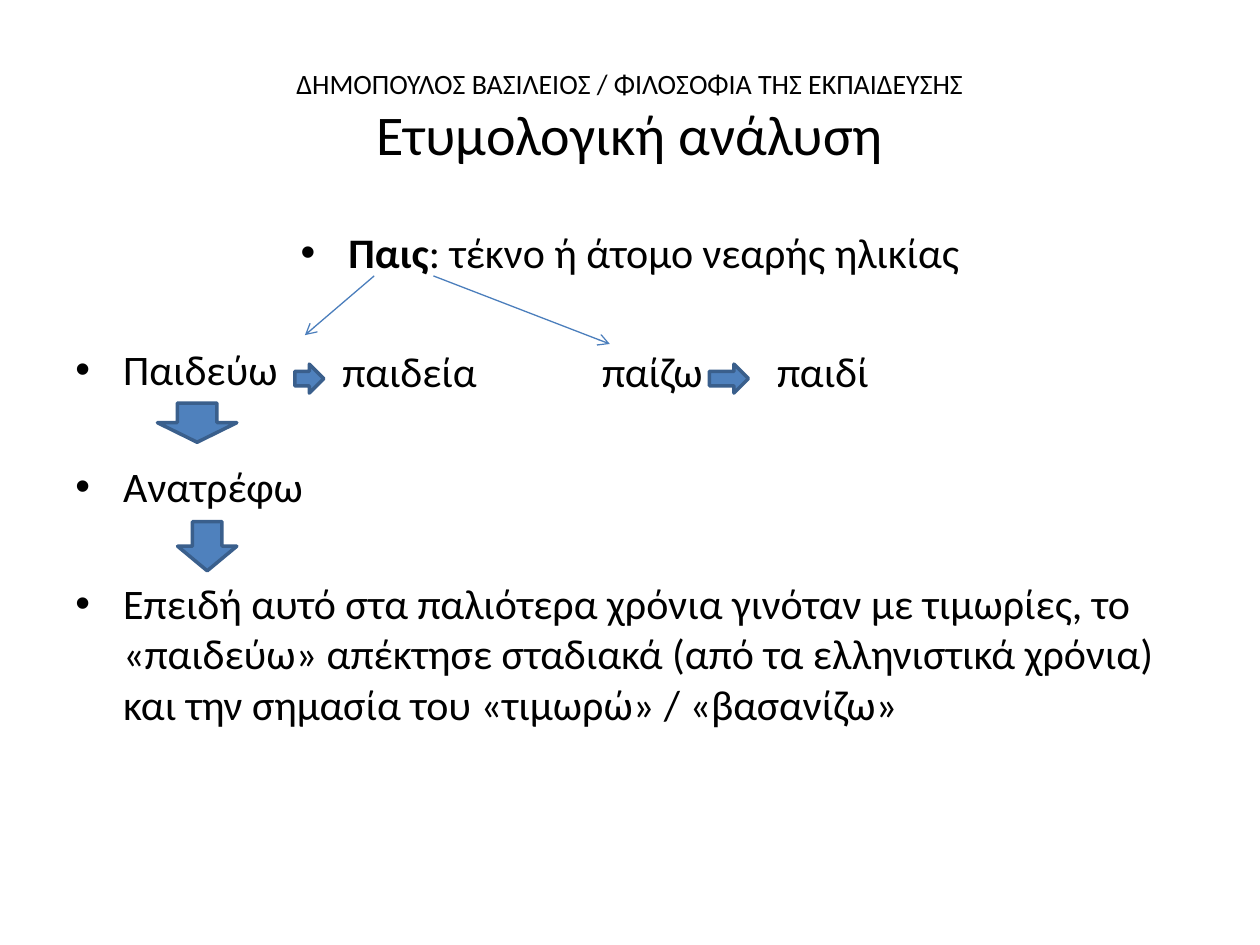
"""Builds the slide on the etymology of the Greek word for child."""
from lxml.etree import SubElement
from pptx import Presentation
from pptx.dml.color import RGBColor
from pptx.enum.shapes import MSO_CONNECTOR, MSO_SHAPE
from pptx.enum.text import MSO_ANCHOR, PP_ALIGN
from pptx.oxml.ns import qn
from pptx.util import Inches, Pt

HEADING = [("ΔΗΜΟΠΟΥΛΟΣ ΒΑΣΙΛΕΙΟΣ / ΦΙΛΟΣΟΦΙΑ ΤΗΣ ΕΚΠΑΙΔΕΥΣΗΣ", 16),
           ("Ετυμολογική ανάλυση", 32)]
ROOT, MEANING = "Παις", ": τέκνο ή άτομο νεαρής ηλικίας"
STEPS = ["Παιδεύω", "Ανατρέφω",
         "Επειδή αυτό στα παλιότερα χρόνια γινόταν με τιμωρίες, το «παιδεύω» "
         "απέκτησε σταδιακά (από τα ελληνιστικά χρόνια) και την σημασία του "
         "«τιμωρώ» / «βασανίζω»"]
DERIVED = [("παιδεία", 2.72), ("παίζω", 4.78), ("παιδί", 6.17)]
BRANCHES = [((2.97, 2.19), (2.42, 2.66)), ((3.44, 2.19), (4.84, 2.73))]
RIGHT, DOWN = MSO_SHAPE.RIGHT_ARROW, MSO_SHAPE.DOWN_ARROW
BLOCK_ARROWS = [(RIGHT, 2.34, 2.89, 0.23, 0.23), (RIGHT, 5.63, 2.89, 0.31, 0.23),
                (DOWN, 1.25, 3.2, 0.63, 0.31), (DOWN, 1.41, 4.14, 0.47, 0.39)]
BODY_SIZE, STEP_GAP, HANG = 24, 38, Inches(0.38)
DERIVED_TOP, MARGIN = 2.69, 0.1


def color(value):
    return RGBColor.from_string(value)


def add_text_frame(slide, left, top, width, height):
    frame = slide.shapes.add_textbox(
        Inches(left), Inches(top), Inches(width), Inches(height)).text_frame
    frame.word_wrap = True
    return frame


def style(paragraph, size, align=PP_ALIGN.LEFT):
    paragraph.alignment = align
    paragraph.font.name = "Calibri"
    paragraph.font.size = Pt(size)
    paragraph.font.color.rgb = color("000000")


def add_bullet(paragraph):
    properties = paragraph._p.get_or_add_pPr()
    properties.set("marL", str(HANG))
    properties.set("indent", str(-HANG))
    bullet_font = properties.makeelement(qn("a:buFont"), {"typeface": "Arial"})
    bullet = properties.makeelement(qn("a:buChar"), {"char": "•"})
    defaults = properties.find(qn("a:defRPr"))
    defaults.addprevious(bullet_font)
    defaults.addprevious(bullet)


def add_heading(slide):
    frame = add_text_frame(slide, 0.5, 0.3, 9, 1.25)
    frame.vertical_anchor = MSO_ANCHOR.MIDDLE
    for index, (words, size) in enumerate(HEADING):
        paragraph = frame.add_paragraph() if index else frame.paragraphs[0]
        paragraph.text = words
        style(paragraph, size, PP_ALIGN.CENTER)


def add_body(slide):
    frame = add_text_frame(slide, 0.5, 1.75, 9, 4.95)
    definition = frame.paragraphs[0]
    root = definition.add_run()
    root.text = ROOT
    root.font.bold = True
    definition.add_run().text = MEANING
    style(definition, BODY_SIZE, PP_ALIGN.CENTER)
    add_bullet(definition)
    for step in STEPS:
        paragraph = frame.add_paragraph()
        paragraph.text = step
        paragraph.space_before = Pt(STEP_GAP)
        style(paragraph, BODY_SIZE)
        add_bullet(paragraph)
    for word, left in DERIVED:
        paragraph = add_text_frame(
            slide, left - MARGIN, DERIVED_TOP, 1.4, 0.5).paragraphs[0]
        paragraph.text = word
        style(paragraph, BODY_SIZE)


def add_branch(slide, start, end):
    branch = slide.shapes.add_connector(
        MSO_CONNECTOR.STRAIGHT, *map(Inches, start + end))
    branch.line.color.rgb = color("4B7EBC")
    branch.line.width = Pt(0.75)
    SubElement(branch.line._get_or_add_ln(), qn("a:tailEnd"), type="arrow")
    SubElement(branch._element.spPr, qn("a:effectLst"))


def add_block_arrow(slide, direction, *box):
    arrow = slide.shapes.add_shape(direction, *map(Inches, box))
    arrow.shadow.inherit = False
    arrow.fill.solid()
    arrow.fill.fore_color.rgb = color("4F81BD")
    arrow.line.color.rgb = color("3A5F8C")
    arrow.line.width = Pt(2)


def main():
    deck = Presentation()
    deck.slide_width, deck.slide_height = Inches(10), Inches(7.5)
    slide = deck.slides.add_slide(deck.slide_layouts[6])
    add_heading(slide)
    add_body(slide)
    for start, end in BRANCHES:
        add_branch(slide, start, end)
    for block_arrow in BLOCK_ARROWS:
        add_block_arrow(slide, *block_arrow)
    deck.save("out.pptx")


if __name__ == "__main__":
    main()
